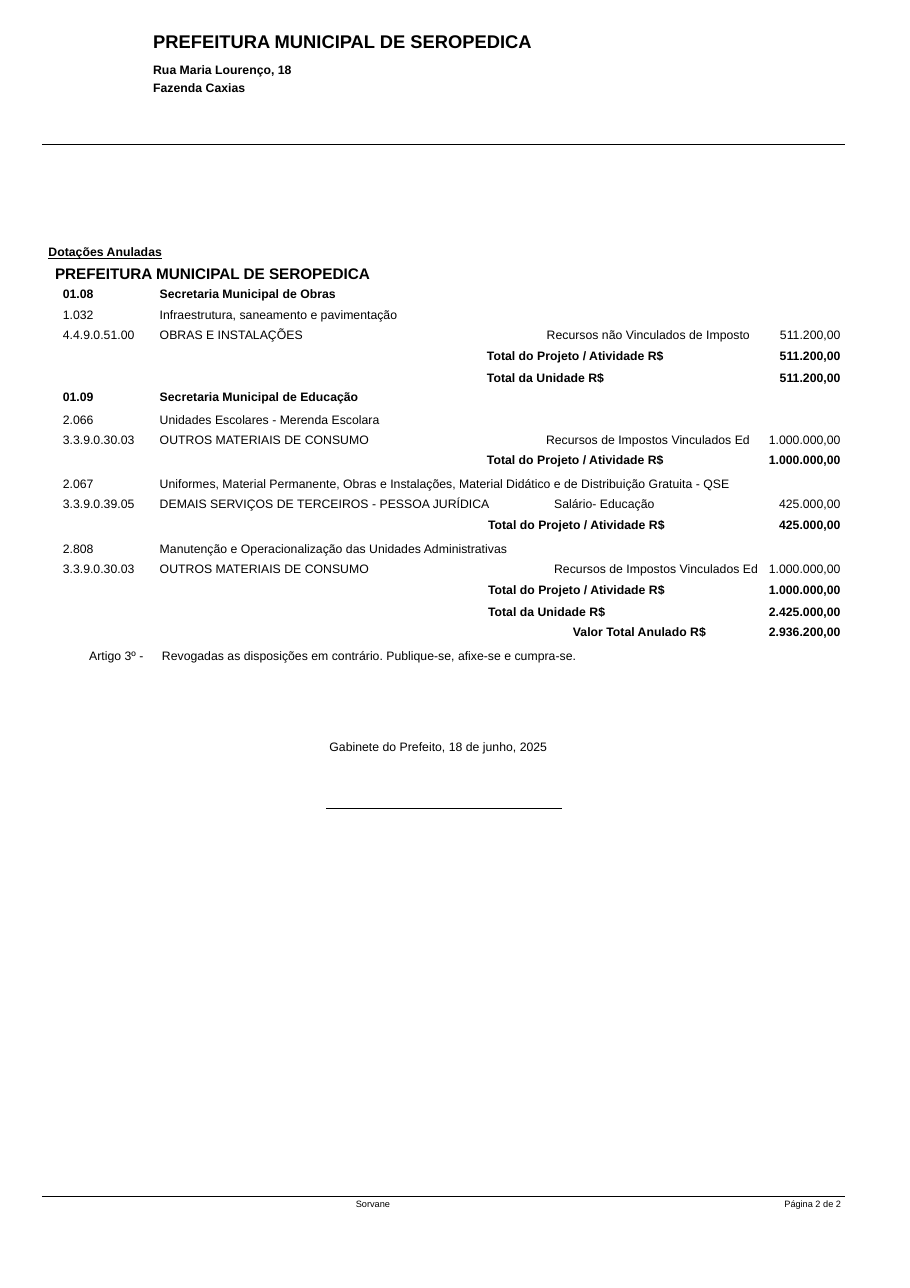
"""Budget decree page with cancelled allocations, on a grid of hundredths of an inch."""
import pptx
import pptx.util
import pptx.dml.color
import pptx.enum.shapes
import pptx.enum.text
import pptx.oxml.ns
import lxml.etree

tint = {"ink": "000000"}
ink = pptx.dml.color.RGBColor.from_string(tint["ink"])
qn = pptx.oxml.ns.qn
right = pptx.enum.text.PP_ALIGN.RIGHT
total = "Total do Projeto / Atividade R$"
unit = "Total da Unidade R$"
goods = "OUTROS MATERIAIS DE CONSUMO"
tax = "Recursos de Impostos Vinculados Ed"
town = "PREFEITURA MUNICIPAL DE SEROPEDICA"


def grid(n):
    return pptx.util.Inches(n / 100)


def style(para, size, bold):
    for run in para.runs:
        run.font.name = "Arial"
        run.font.size = pptx.util.Pt(size)
        run.font.bold = bold
        run.font.color.rgb = ink


deck = pptx.Presentation()
deck.slide_width, deck.slide_height = grid(826), grid(1169)
page = deck.slides.add_slide(deck.slide_layouts[6])

for x, y, end in [(38, 131, 767), (296, 734, 510), (38, 1086, 767)]:
    rule = page.shapes.add_connector(
        pptx.enum.shapes.MSO_CONNECTOR.STRAIGHT, grid(x), grid(y), grid(end), grid(y))
    rule.line.color.rgb = ink
    rule.line.width = pptx.util.Pt(0.75)
    lxml.etree.SubElement(rule._element.spPr, qn("a:effectLst"))

notes = [
    (139, 26, 349, 62, 1, True, [
        (town, 12, 0, 1, 0),
        ("Rua Maria Lourenço, 18", 8, 4.5, 1.25, 0),
        ("Fazenda Caxias", 8, 0, 1.25, 0)]),
    (44, 217, 297, 41, 5, True, [
        ("Dotações Anuladas", 8, 0, 1, 0),
        (town, 10, 3.4, 1, 6)]),
    (299, 670, 209, 16, 1, False, [
        ("Gabinete do Prefeito, 18 de junho, 2025", 8, 0, 1, 0)]),
    (323, 1087, 33, 12, 1, False, [("Sorvane", 6, 0, 1, 0)]),
    (712, 1087, 54, 12, 1, False, [("Página 2 de 2", 6, 0, 1, 0)]),
]
for x, y, wide, high, top, bold, lines in notes:
    box = page.shapes.add_textbox(grid(x), grid(y), grid(wide), grid(high))
    frame = box.text_frame
    frame.word_wrap = bold
    frame.margin_left = frame.margin_right = frame.margin_bottom = 0
    frame.margin_top = grid(top)
    frame.text = "\n".join(line[0] for line in lines)
    for para, (text, size, gap, lead, dent) in zip(frame.paragraphs, lines):
        para._p.get_or_add_pPr().set("marL", str(grid(dent)))
        para.space_before = pptx.util.Pt(gap)
        para.line_spacing = lead
        style(para, size, bold)
        para.runs[0].font.underline = text == "Dotações Anuladas"

rows = [
    (16, 0, 0, True, "01.08", "Secretaria Municipal de Obras", "", ""),
    (19, 3, 3, False, "1.032", "Infraestrutura, saneamento e pavimentação", "", ""),
    (19, 2, 2, False, "4.4.9.0.51.00", "OBRAS E INSTALAÇÕES",
     "Recursos não Vinculados de Imposto", "511.200,00"),
    (19, 2, 2, True, "", "", total, "511.200,00"),
    (38, 20, 3, True, "01.09", "Secretaria Municipal de Educação", unit, "511.200,00"),
    (19, 3, 3, False, "2.066", "Unidades Escolares - Merenda Escolara", "", ""),
    (19, 2, 2, False, "3.3.9.0.30.03", goods, tax, "1.000.000,00"),
    (16, 2, 2, True, "", "", total, "1.000.000,00"),
    (24, 7, 7, False, "2.067", "Uniformes, Material Permanente, Obras e Instalações, "
     "Material Didático e de Distribuição Gratuita - QSE", "", ""),
    (19, 2, 2, False, "3.3.9.0.39.05", "DEMAIS SERVIÇOS DE TERCEIROS - PESSOA JURÍDICA",
     "Salário- Educação", "425.000,00"),
    (20, 2, 2, True, "", "", total, "425.000,00"),
    (20, 3, 3, False, "2.808",
     "Manutenção e Operacionalização das Unidades Administrativas", "", ""),
    (19, 2, 2, False, "3.3.9.0.30.03", goods, tax, "1.000.000,00"),
    (19, 2, 2, True, "", "", total, "1.000.000,00"),
    (19, 3, 3, True, "", "", unit, "2.425.000,00"),
    (20, 2, 2, True, "", "", "Valor Total Anulado R$", "2.936.200,00"),
    (17, 4, 4, False, "Artigo 3º -", "Revogadas as disposições em contrário. "
     "Publique-se, afixe-se e cumpra-se.", "", ""),
]
cols = [83, 264, 288, 76]
joined = 8
table = page.shapes.add_table(
    len(rows), len(cols), grid(54), grid(261), grid(sum(cols)),
    grid(sum(row[0] for row in rows))).table
table.first_row = table.horz_banding = False
for col, wide in zip(table.columns, cols):
    col.width = grid(wide)
table.cell(0, 2).merge(table.cell(1, 3))

for r, (high, low, top, bold, code, name, fund, cost) in enumerate(rows):
    table.rows[r].height = grid(high)
    label = fund.startswith("Total")
    last = code.startswith("Artigo")
    texts = [code, name, fund, cost]
    left = [27 if last else 3, 10 if last else 8, 41 if label else 0, 0]
    ends = [0, 0, 0 if label else 8, 2]
    sides = [None, None, None if label else right, right]
    if r >= joined:
        table.cell(r, 1).merge(table.cell(r, 2))
        texts[1:3] = ["\t".join(filter(None, (name, fund))), ""]
        if not name:
            left[1] = 306 if label else 0
            ends[1] = 0 if label else 48
            sides[1] = sides[2]
    for c, text in enumerate(texts):
        cell = table.cell(r, c)
        cell.fill.background()
        cell.margin_left, cell.margin_right = grid(left[c]), grid(ends[c])
        cell.margin_top, cell.margin_bottom = grid(low if c < 2 else top), 0
        cell.text_frame.text = text
        para = cell.text_frame.paragraphs[0]
        para.alignment = sides[c]
        if "\t" in text:
            tabs = lxml.etree.SubElement(para._p.get_or_add_pPr(), qn("a:tabLst"))
            lxml.etree.SubElement(tabs, qn("a:tab"), pos=str(grid(358)), algn="l")
        if not text:
            lxml.etree.SubElement(para._p, qn("a:endParaRPr"), sz="800")
        style(para, 8, bold)

deck.save("out.pptx")
